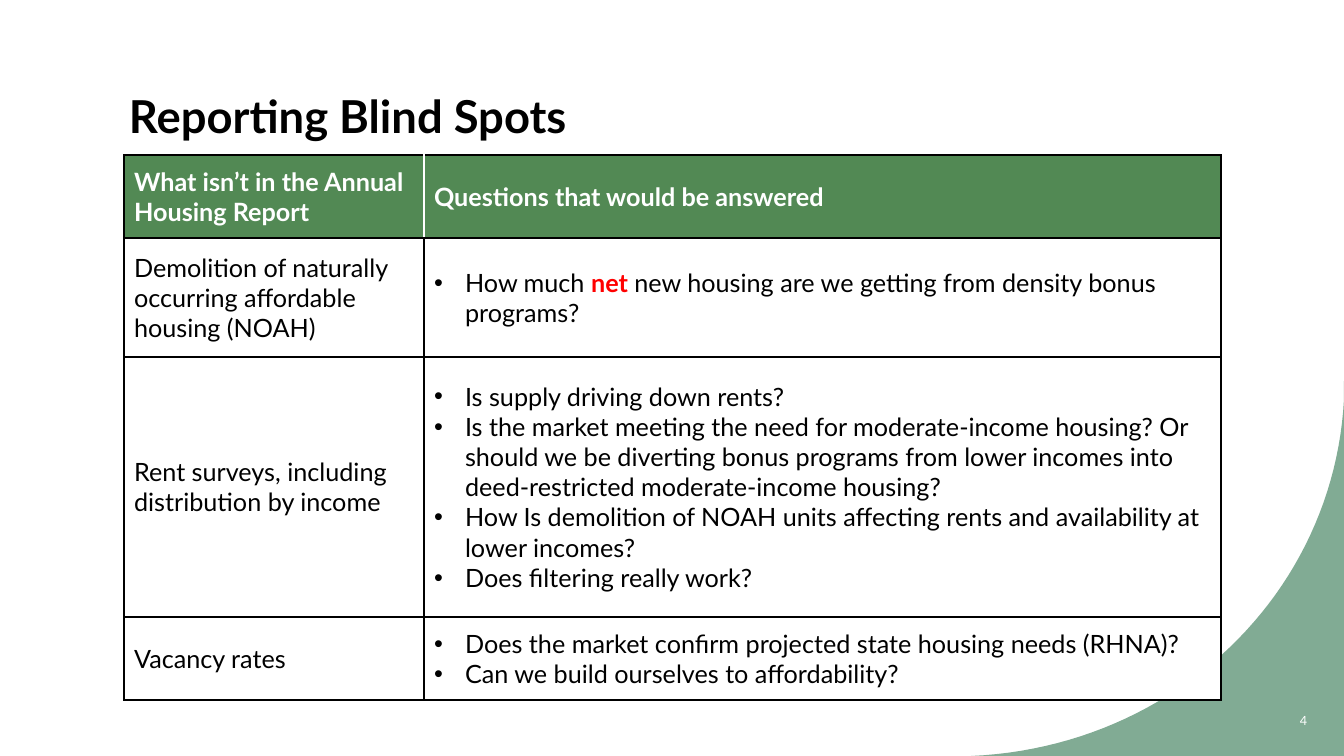
import pptx
import pptx.dml.color
import pptx.enum.text
import pptx.oxml.ns
import pptx.util
from lxml import etree

COLORS = {
    "black": "000000",
    "white": "FFFFFF",
    "header": "528954",
    "corner": "81AB94",
    "emphasis": "FF0000",
}
FONT = "Lato"
TITLE = "Reporting Blind Spots"
PAGE_NUMBER = "4"
HEADINGS = ["What isn’t in the Annual Housing Report", "Questions that would be answered"]
BLIND_SPOTS = [
    ("Demolition of naturally occurring affordable housing (NOAH)", [
        "How much net new housing are we getting from density bonus programs?",
    ]),
    ("Rent surveys, including distribution by income", [
        "Is supply driving down rents?",
        "Is the market meeting the need for moderate-income housing? Or should we be "
        "diverting bonus programs from lower incomes into deed-restricted "
        "moderate-income housing?",
        "How Is demolition of NOAH units affecting rents and availability at lower incomes?",
        "Does filtering really work?",
    ]),
    ("Vacancy rates", [
        "Does the market confirm projected state housing needs (RHNA)?",
        "Can we build ourselves to affordability?",
    ]),
]
EMPHASIZED = " net "

SLIDE_SIZE = (1344, 756)
TITLE_BOX = (119, 80, 1097, 68)
NUMBER_BOX = (1272, 701, 45, 40)
TABLE_ORIGIN = (124, 155)
COLUMN_WIDTHS = [300, 797]
ROW_HEIGHTS = [83, 119, 260, 83]
BULLET_INDENT = 31
CORNER_CURVE = [(971, 756), (1176, 747), (1334, 592), (1344, 399)]
CORNER_TOP = (1344, 381)
CURVE_STEPS = 48


def px(length):
    return pptx.util.Emu(round(length * 914400 / 100.8))


def rgb(name):
    return pptx.dml.color.RGBColor.from_string(COLORS[name])


def style(font, size, color, bold=False):
    font.name = FONT
    font.size = pptx.util.Pt(size)
    font.bold = bold
    font.color.rgb = rgb(color)


def add_text(slide, box, text, size, color, anchor, bold=False):
    shape = slide.shapes.add_textbox(*map(px, box))
    frame = shape.text_frame
    frame.word_wrap = True
    frame.vertical_anchor = anchor
    paragraph = frame.paragraphs[0]
    paragraph.text = text
    style(paragraph.font, size, color, bold)
    return paragraph


def curve_point(step):
    t = step / CURVE_STEPS
    weights = [(1 - t) ** 3, 3 * t * (1 - t) ** 2, 3 * t * t * (1 - t), t ** 3]
    return tuple(
        px(sum(weight * point[axis] for weight, point in zip(weights, CORNER_CURVE)))
        for axis in (0, 1)
    )


def add_corner(slide):
    points = [curve_point(step) for step in range(CURVE_STEPS + 1)]
    points += [tuple(map(px, CORNER_TOP)), tuple(map(px, SLIDE_SIZE))]
    builder = slide.shapes.build_freeform(*points[0])
    builder.add_line_segments(points[1:], close=True)
    shape = builder.convert_to_shape()
    shape.shadow.inherit = False
    shape.fill.solid()
    shape.fill.fore_color.rgb = rgb("corner")
    shape.line.fill.background()


def set_borders(cell, sides):
    properties = cell._tc.get_or_add_tcPr()
    qn = pptx.oxml.ns.qn
    for index, (side, color) in enumerate(sides.items()):
        line = etree.Element(qn(f"a:ln{side}"), w=str(pptx.util.Pt(1)))
        fill = etree.SubElement(line, qn("a:solidFill"))
        etree.SubElement(fill, qn("a:srgbClr"), val=COLORS[color])
        properties.insert(index, line)


def set_bullet(paragraph):
    properties = paragraph._p.get_or_add_pPr()
    properties.set("marL", str(px(BULLET_INDENT)))
    properties.set("indent", str(-px(BULLET_INDENT)))
    qn = pptx.oxml.ns.qn
    etree.SubElement(properties, qn("a:buFont"), typeface="Arial")
    etree.SubElement(properties, qn("a:buChar"), char="•")


def fill_cell(cell, texts, header, bulleted):
    cell.vertical_anchor = pptx.enum.text.MSO_ANCHOR.MIDDLE
    cell.fill.solid()
    cell.fill.fore_color.rgb = rgb("header" if header else "white")
    frame = cell.text_frame
    for index, text in enumerate(texts):
        paragraph = frame.paragraphs[0] if index == 0 else frame.add_paragraph()
        if bulleted:
            set_bullet(paragraph)
        style(paragraph.font, 18, "white" if header else "black", header)
        before, emphasized, after = text.partition(EMPHASIZED)
        if not emphasized:
            paragraph.add_run().text = text
            continue
        paragraph.add_run().text = before + " "
        run = paragraph.add_run()
        run.text = emphasized.strip()
        style(run.font, 18, "emphasis", True)
        paragraph.add_run().text = " " + after


def add_blind_spots(slide):
    rows = [[[heading] for heading in HEADINGS]]
    rows += [[[topic], questions] for topic, questions in BLIND_SPOTS]
    size = (sum(COLUMN_WIDTHS), sum(ROW_HEIGHTS))
    frame = slide.shapes.add_table(
        len(rows), len(HEADINGS), *map(px, TABLE_ORIGIN + size))
    table = frame.table
    table.horz_banding = False
    for column, width in zip(table.columns, COLUMN_WIDTHS):
        column.width = px(width)
    for row, height in zip(table.rows, ROW_HEIGHTS):
        row.height = px(height)
    for row_index, row in enumerate(rows):
        for column_index, texts in enumerate(row):
            header = row_index == 0
            cell = table.cell(row_index, column_index)
            fill_cell(cell, texts, header, column_index == 1 and not header)
            sides = dict.fromkeys("LRTB", "black")
            if header:
                sides["R" if column_index == 0 else "L"] = "white"
            set_borders(cell, sides)


def main():
    presentation = pptx.Presentation()
    presentation.slide_width, presentation.slide_height = map(px, SLIDE_SIZE)
    slide = presentation.slides.add_slide(presentation.slide_layouts[6])
    anchors = pptx.enum.text.MSO_ANCHOR
    add_corner(slide)
    title = add_text(slide, TITLE_BOX, TITLE, 32.4, "black", anchors.BOTTOM, True)
    title.line_spacing = 1.1
    number = add_text(slide, NUMBER_BOX, PAGE_NUMBER, 9, "white", anchors.MIDDLE)
    number.alignment = pptx.enum.text.PP_ALIGN.RIGHT
    add_blind_spots(slide)
    presentation.save("out.pptx")


if __name__ == "__main__":
    main()
